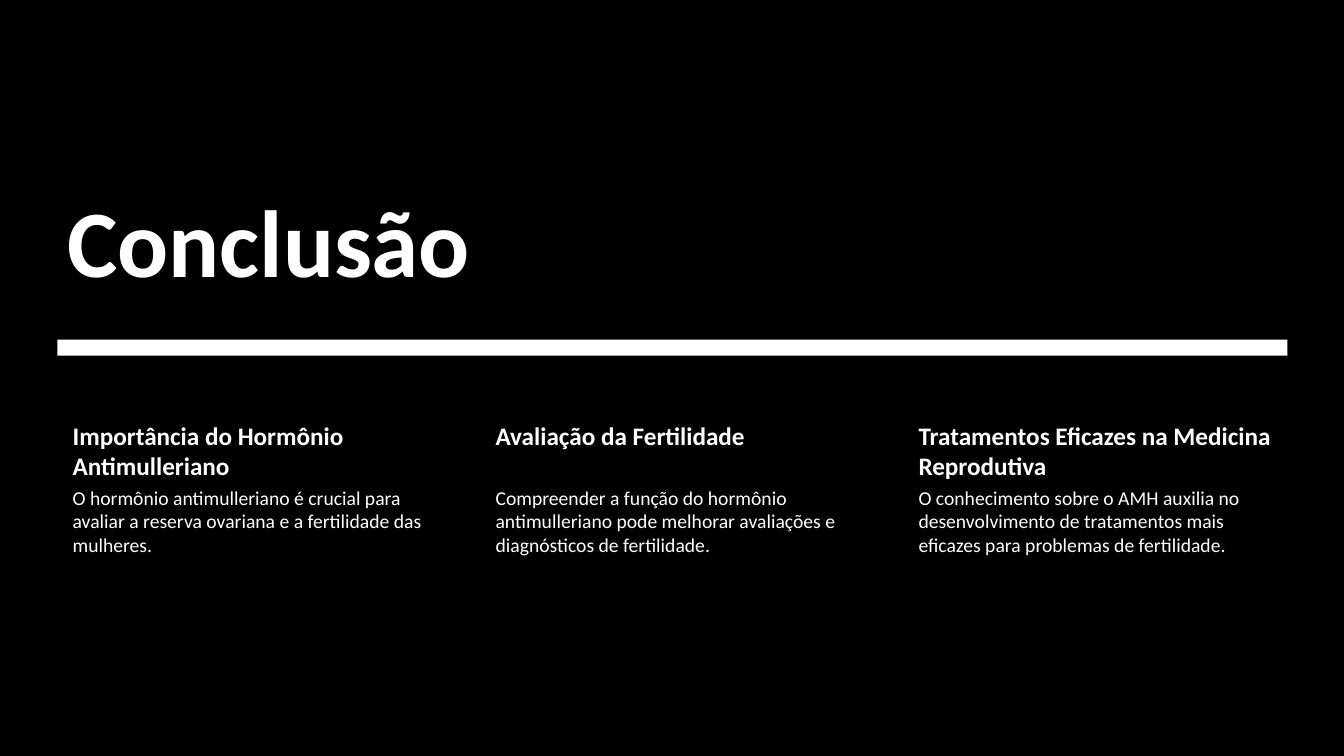
from pptx import Presentation
from pptx.dml.color import RGBColor
from pptx.enum.shapes import MSO_SHAPE
from pptx.enum.text import MSO_ANCHOR
from pptx.util import Inches, Pt

# Content
TITLE = "Conclusão"
COLUMNS = [
    ("Importância do Hormônio Antimulleriano",
     "O hormônio antimulleriano é crucial para avaliar a reserva ovariana "
     "e a fertilidade das mulheres."),
    ("Avaliação da Fertilidade",
     "Compreender a função do hormônio antimulleriano pode melhorar "
     "avaliações e diagnósticos de fertilidade."),
    ("Tratamentos Eficazes na Medicina Reprodutiva",
     "O conhecimento sobre o AMH auxilia no desenvolvimento de tratamentos "
     "mais eficazes para problemas de fertilidade."),
]

# Theme and layout
THEME = {
    "background": RGBColor(0x00, 0x00, 0x00),
    "foreground": RGBColor(0xFF, 0xFF, 0xFF),
    "font": "Calibri",
    "title": {"size": Pt(68), "bold": True},
    "heading": {"size": Pt(18), "bold": True},
    "body": {"size": Pt(14), "bold": False},
}
SLIDE_WIDTH, SLIDE_HEIGHT = 13.33, 7.5
LEFT, CONTENT_WIDTH = 0.57, 12.2
COLUMN_WIDTH = 3.81
COLUMN_STEP = (CONTENT_WIDTH - COLUMN_WIDTH) / (len(COLUMNS) - 1)
HEADING_TOP, HEADING_HEIGHT = 4.14, 0.66
BODY_TOP, BODY_HEIGHT = HEADING_TOP + HEADING_HEIGHT, 2.04


def set_values(target, values):
    for name, value in values.items():
        setattr(target, name, value)


def add_bar(slide, left, top, width, height, color):
    shape = slide.shapes.add_shape(
        MSO_SHAPE.RECTANGLE, *map(Inches, (left, top, width, height)))
    shape.shadow.inherit = False
    shape.fill.solid()
    shape.fill.fore_color.rgb = color
    shape.line.fill.background()


def add_text(slide, text, style, box, insets, anchor=MSO_ANCHOR.TOP):
    frame = slide.shapes.add_textbox(*map(Inches, box)).text_frame
    left, top, right, bottom = map(Inches, insets)
    set_values(frame, {
        "word_wrap": True, "vertical_anchor": anchor,
        "margin_left": left, "margin_top": top,
        "margin_right": right, "margin_bottom": bottom,
    })
    run = frame.paragraphs[0].add_run()
    run.text = text
    set_values(run.font, {"name": THEME["font"], **THEME[style]})
    run.font.color.rgb = THEME["foreground"]


def main():
    presentation = Presentation()
    set_values(presentation, {"slide_width": Inches(SLIDE_WIDTH),
                              "slide_height": Inches(SLIDE_HEIGHT)})
    slide = presentation.slides.add_slide(presentation.slide_layouts[6])

    # Background
    slide.background.fill.solid()
    slide.background.fill.fore_color.rgb = THEME["background"]
    add_bar(slide, 0, 0, SLIDE_WIDTH, SLIDE_HEIGHT, THEME["background"])

    # Title and divider
    add_bar(slide, LEFT, 3.37, CONTENT_WIDTH, 0.16, THEME["foreground"])
    add_text(slide, TITLE, "title", (LEFT, 1.45, CONTENT_WIDTH, 1.54),
             (0.1, 0.05, 0.1, 0.05), MSO_ANCHOR.BOTTOM)

    # Columns
    for index, (heading, body) in enumerate(COLUMNS):
        left = LEFT + index * COLUMN_STEP
        add_text(slide, heading, "heading",
                 (left, HEADING_TOP, COLUMN_WIDTH, HEADING_HEIGHT),
                 (0.15, 0.03, 0.03, 0.03))
        add_text(slide, body, "body",
                 (left, BODY_TOP, COLUMN_WIDTH, BODY_HEIGHT),
                 (0.15, 0.02, 0.02, 0.02))

    presentation.save("out.pptx")


if __name__ == "__main__":
    main()
